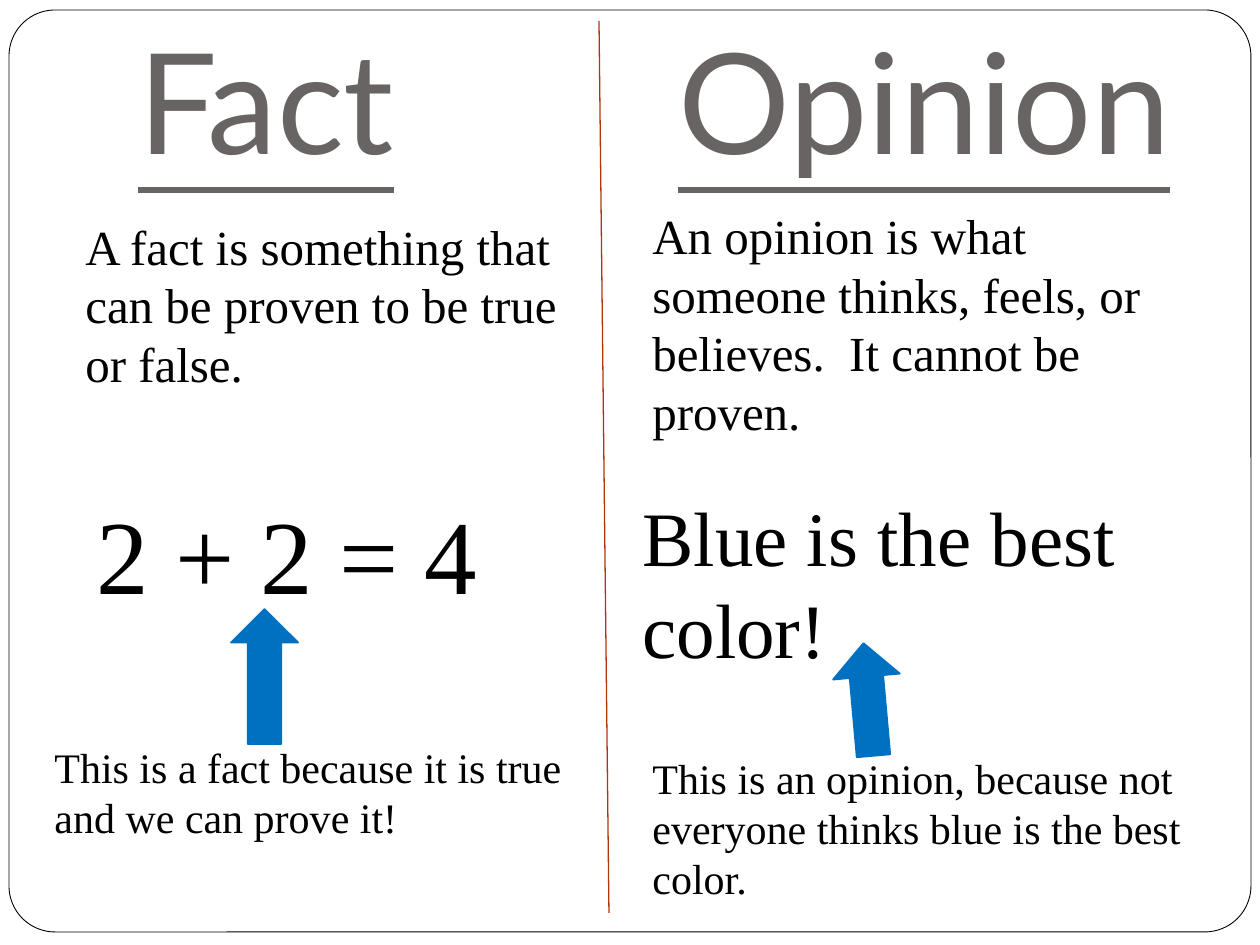
import pptx
import pptx.util
import pptx.dml.color
import pptx.enum.shapes
import pptx.enum.text
import lxml.etree

SCALE = 914400 / 126
HUES = {"page": "FFFFFF", "ink": "000000", "title": "696464",
        "rule": "B1360B", "arrow": "0070C0"}
FRAME = (9, 10, 1242, 922)
TITLE = (126, 38, 1071, 157)
HEADS = ("Fact", "\t", "Opinion")
STOP = 540
RULE = (599, 21, 609, 913)
NOTES = [
    ("A fact is something that can be proven to be true or false.", 28, (73, 210, 504, 190)),
    ("An opinion is what someone thinks, feels, or believes.  It cannot be proven.", 28, (640, 199, 557, 251)),
    ("2 + 2 = 4", 60, (84, 483, 462, 140)),
    ("This is a fact because it is true and we can prove it!", 24, (42, 735, 546, 115)),
    ("Blue is the best color!", 44, (630, 483, 609, 199)),
    ("This is an opinion, because not everyone thinks blue is the best color.", 24, (640, 746, 559, 165)),
]
ARROWS = [((231, 609, 67, 135), 0), ((835, 643, 67, 113), 354.9)]


def emu(px):
    return round(px * SCALE)


def place(box):
    return [emu(n) for n in box]


def hue(name):
    return pptx.dml.color.RGBColor.from_string(HUES[name])


def style(run, font, size, name):
    run.font.name = font
    run.font.size = pptx.util.Pt(size)
    run.font.color.rgb = hue(name)


def add_form(kind, box, fill, line, width):
    form = slide.shapes.add_shape(kind, *place(box))
    form.shadow.inherit = False
    form.fill.solid()
    form.fill.fore_color.rgb = hue(fill)
    form.line.color.rgb = hue(line)
    form.line.width = pptx.util.Pt(width)
    return form


def add_text(box):
    frame = slide.shapes.add_textbox(*place(box)).text_frame
    frame.word_wrap = True
    return frame


def add_title():
    frame = add_text(TITLE)
    frame.vertical_anchor = pptx.enum.text.MSO_ANCHOR.BOTTOM
    frame.margin_bottom = pptx.util.Inches(0.1)
    para = frame.paragraphs[0]
    for word in HEADS:
        run = para.add_run()
        run.text = word
        style(run, "Lato", 80, "title")
        run.font.underline = word != "\t"
    props = para._p.get_or_add_pPr()
    tabs = lxml.etree.SubElement(props, pptx.oxml.ns.qn("a:tabLst"))
    lxml.etree.SubElement(tabs, pptx.oxml.ns.qn("a:tab"), pos=str(emu(STOP)), algn="l")


def add_rule():
    rule = slide.shapes.add_connector(pptx.enum.shapes.MSO_CONNECTOR.STRAIGHT, *place(RULE))
    rule.line.color.rgb = hue("rule")
    rule.line.width = pptx.util.Pt(0.75)
    lxml.etree.SubElement(rule._element.spPr, pptx.oxml.ns.qn("a:effectLst"))


deck = pptx.Presentation()
deck.slide_width, deck.slide_height = emu(1260), emu(945)
slide = deck.slides.add_slide(deck.slide_layouts[6])

kinds = pptx.enum.shapes.MSO_SHAPE
frame = add_form(kinds.ROUNDED_RECTANGLE, FRAME, "page", "ink", 0.5)
frame.adjustments[0] = 0.05
add_title()
add_rule()
for words, size, box in NOTES:
    para = add_text(box).paragraphs[0]
    para.text = words
    style(para.runs[0], "Times New Roman", size, "ink")
for box, turn in ARROWS:
    add_form(kinds.UP_ARROW, box, "arrow", "arrow", 1).rotation = turn

deck.save("out.pptx")
